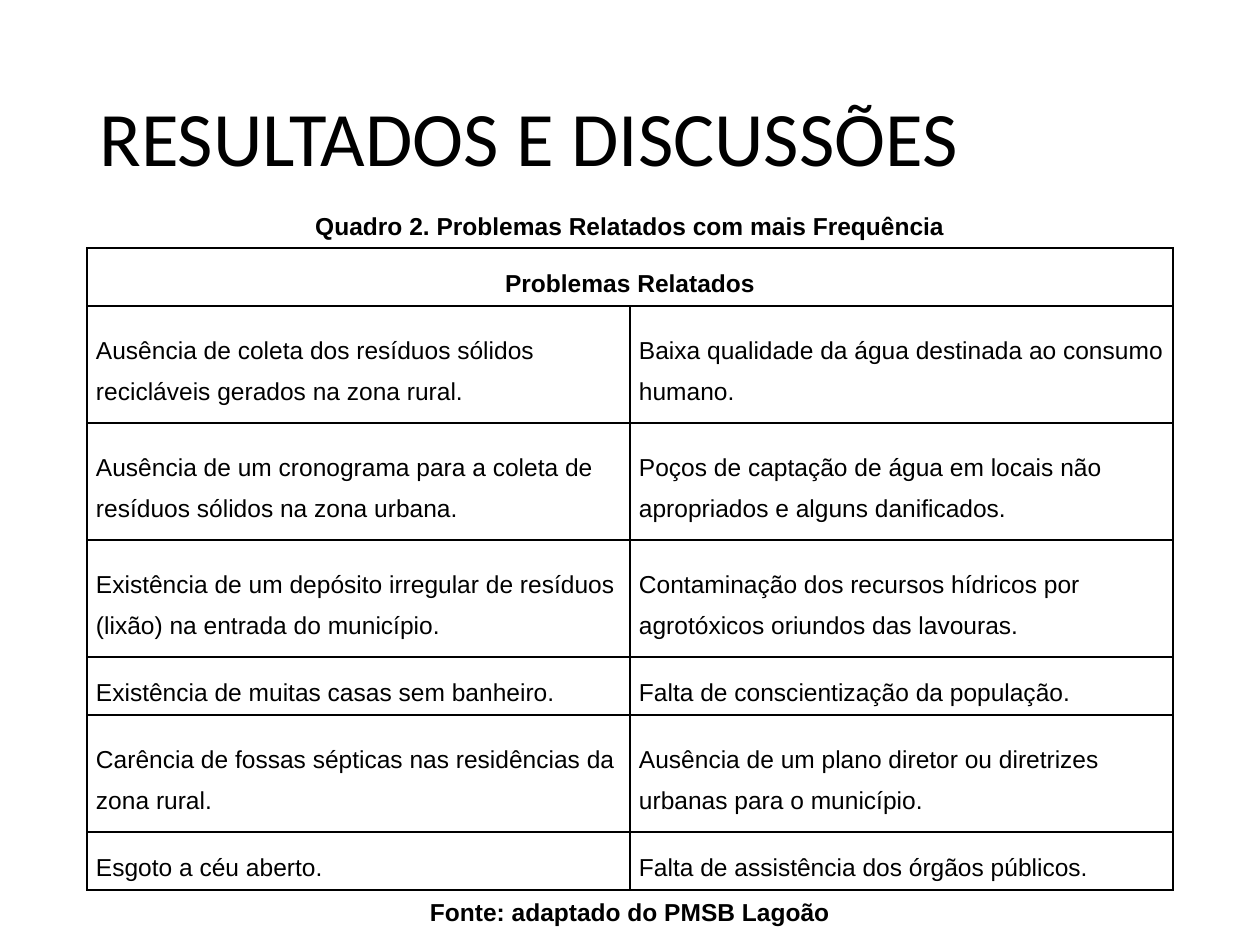
"""Build the slide of reported problems: a title, a caption, a table and its source."""
from dataclasses import dataclass

from lxml.etree import SubElement
from pptx import Presentation
from pptx.dml.color import RGBColor
from pptx.enum.text import MSO_ANCHOR as Anchor, MSO_AUTO_SIZE as Auto, PP_ALIGN as Align
from pptx.oxml.ns import qn
from pptx.util import Emu, Pt

DPI = 126
BLACK = RGBColor(0x00, 0x00, 0x00)
HEAD = "Problemas Relatados"
ROWS = [
    ("Ausência de coleta dos resíduos sólidos recicláveis gerados na zona rural.",
     "Baixa qualidade da água destinada ao consumo humano."),
    ("Ausência de um cronograma para a coleta de resíduos sólidos na zona urbana.",
     "Poços de captação de água em locais não apropriados e alguns danificados."),
    ("Existência de um depósito irregular de resíduos (lixão) na entrada do município.",
     "Contaminação dos recursos hídricos por agrotóxicos oriundos das lavouras."),
    ("Existência de muitas casas sem banheiro.",
     "Falta de conscientização da população."),
    ("Carência de fossas sépticas nas residências da zona rural.",
     "Ausência de um plano diretor ou diretrizes urbanas para o município."),
    ("Esgoto a céu aberto.",
     "Falta de assistência dos órgãos públicos."),
]
LOW, TALL = 58, 117
HIGHS = [LOW, TALL, TALL, TALL, LOW, TALL, LOW]


def px(num: int) -> Emu:
    """Turn pixels into EMU."""
    return Emu(round(num * 914400 / DPI))


@dataclass
class Style:
    """Look of one paragraph."""
    size: int = 14
    face: str = "Arial"
    bold: bool = False
    align: Align = Align.LEFT
    lead: float = 1.0


@dataclass
class Label:
    """Text box with its place in px."""
    text: str
    box: tuple[int, int, int, int]
    style: Style
    anchor: Anchor = Anchor.TOP
    wrap: bool = True
    auto: Auto = Auto.SHAPE_TO_FIT_TEXT


NOTE = Style(bold=True, align=Align.CENTER)
TITLE = Label("RESULTADOS E DISCUSSÕES", (87, 50, 1086, 183),
              Style(44, "Calibri", lead=0.9), Anchor.MIDDLE, auto=Auto.NONE)
NOTES = [
    Label("Quadro 2. Problemas Relatados com mais Frequência", (0, 205, 1260, 43), NOTE),
    Label("Fonte: adaptado do PMSB Lagoão", (417, 890, 426, 43), NOTE, Anchor.MIDDLE, False),
]


def write(frame, text: str, style: Style) -> None:
    """Fill a text frame with one styled paragraph."""
    para = frame.paragraphs[0]
    para.text = text
    para.alignment, para.line_spacing = style.align, style.lead
    font = para.font
    font.size, font.name, font.bold = Pt(style.size), style.face, style.bold
    font.color.rgb = BLACK


def add_label(slide, label: Label) -> None:
    """Draw a text box."""
    frame = slide.shapes.add_textbox(*map(px, label.box)).text_frame
    frame.word_wrap, frame.auto_size = label.wrap, label.auto
    frame.vertical_anchor = label.anchor
    write(frame, label.text, label.style)


def add_edges(cell) -> None:
    """Rule all four sides of a cell."""
    props = cell._tc.get_or_add_tcPr()
    for spot, side in enumerate("LRTB"):
        line = SubElement(props, qn(f"a:ln{side}"), w=str(Pt(1)))
        fill = SubElement(line, qn("a:solidFill"))
        SubElement(fill, qn("a:srgbClr"), val=str(BLACK))
        props.insert(spot, line)


def add_grid(slide) -> None:
    """Draw the table of problems."""
    table = slide.shapes.add_table(len(HIGHS), 2, px(87), px(248), px(1086), px(sum(HIGHS))).table
    table.first_row = table.horz_banding = False
    for row, high in zip(table.rows, HIGHS):
        row.height = px(high)
    for cell in table.iter_cells():
        cell.fill.background()
        cell.vertical_anchor = Anchor.MIDDLE
        cell.margin_left = cell.margin_right = px(9)
        cell.margin_top = cell.margin_bottom = 0
        add_edges(cell)
    table.cell(0, 0).merge(table.cell(0, 1))
    write(table.cell(0, 0).text_frame, HEAD, Style(bold=True, align=Align.CENTER, lead=1.5))
    for row, pair in enumerate(ROWS, 1):
        for col, text in enumerate(pair):
            write(table.cell(row, col).text_frame, text, Style(lead=1.5))


def main() -> None:
    """Build and save the deck."""
    deck = Presentation()
    deck.slide_width, deck.slide_height = px(1260), px(945)
    slide = deck.slides.add_slide(deck.slide_layouts[6])
    add_label(slide, TITLE)
    add_grid(slide)
    for note in NOTES:
        add_label(slide, note)
    deck.save("out.pptx")


if __name__ == "__main__":
    main()
